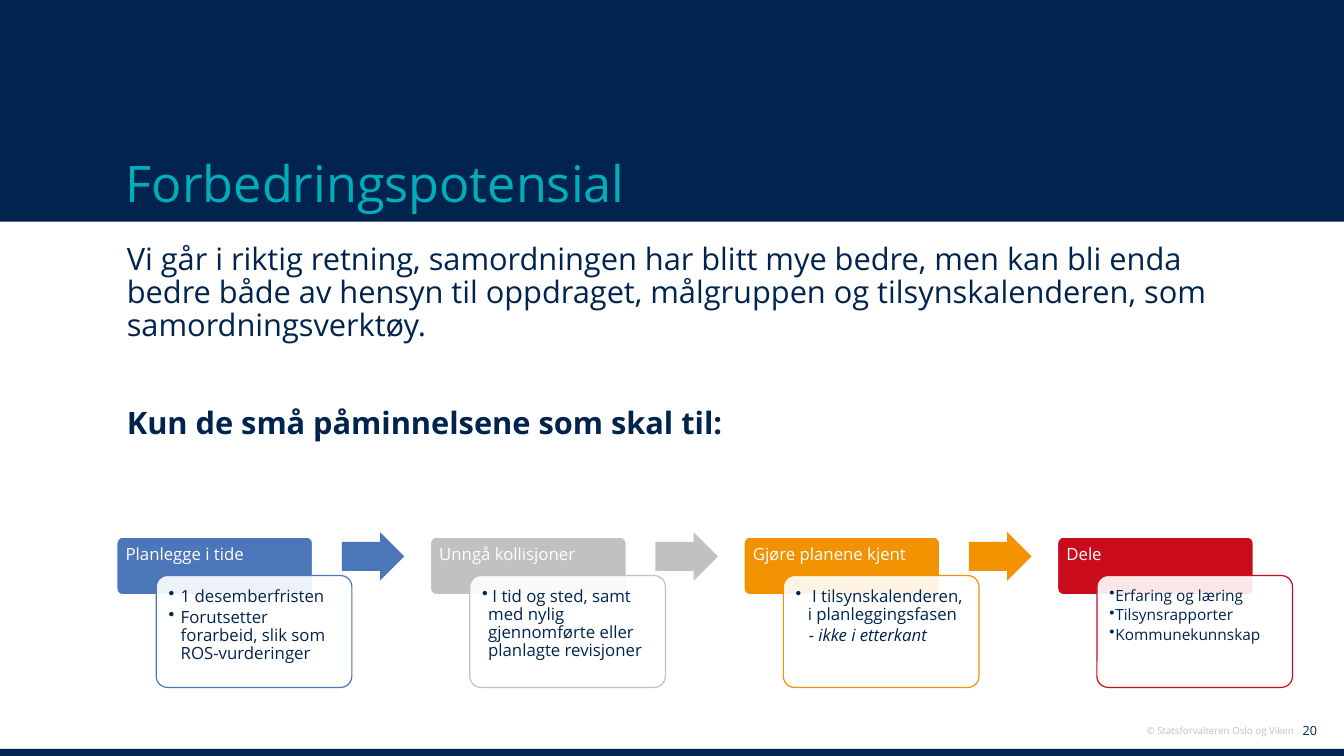
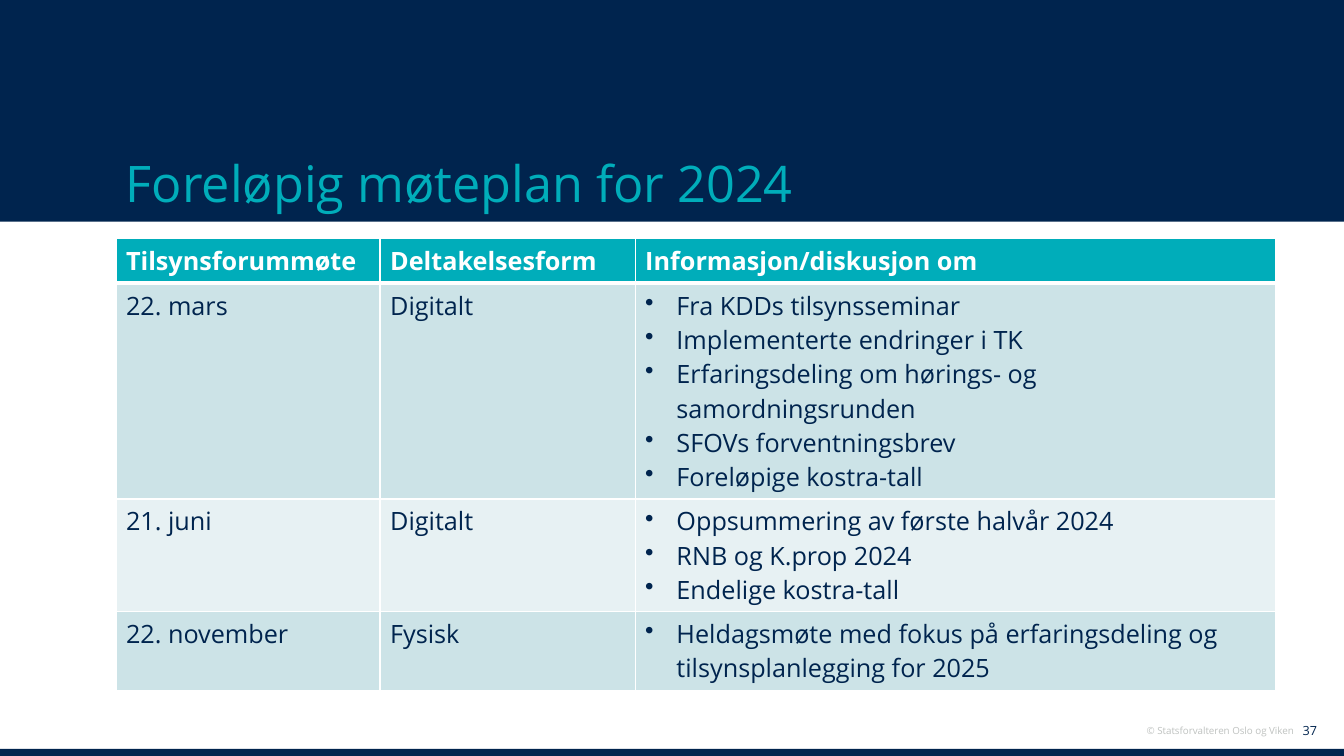
import pptx
import pptx.util
import pptx.dml.color
import pptx.enum.shapes
import pptx.enum.text
import pptx.oxml
import pptx.oxml.ns

Inches = pptx.util.Inches
Pt = pptx.util.Pt
Shape = pptx.enum.shapes.MSO_SHAPE
Align = pptx.enum.text.PP_ALIGN
Anchor = pptx.enum.text.MSO_ANCHOR

FONT = "Open Sans"
COLORS = {
    "navy": "00244E",
    "teal": "00ADBA",
    "white": "FFFFFF",
    "gray": "BFC2C0",
    "blue": "4C76BA",
    "orange": "F39200",
    "red": "C90B1C",
    "row_dark": "CCE3E7",
    "row_light": "E7F1F3",
}


def color(name):
    return pptx.dml.color.RGBColor.from_string(COLORS[name])


def write(frame, text, size=12, ink="navy", bold=False, italic=False, align=None,
          bullet=False, left=0, hanging=0, line_spacing=None, before=None, after=None):
    paragraph = frame.paragraphs[0]
    if paragraph.runs:
        paragraph = frame.add_paragraph()
    properties = paragraph._p.get_or_add_pPr()
    if left:
        properties.set("marL", str(Inches(left)))
        properties.set("indent", str(-Inches(hanging)))
    if bullet:
        mark = pptx.oxml.parse_xml(f'<a:buChar {pptx.oxml.ns.nsdecls("a")} char="•"/>')
        properties.append(mark)
    if align is not None:
        paragraph.alignment = align
    if line_spacing is not None:
        paragraph.line_spacing = line_spacing
    if before is not None:
        paragraph.space_before = Pt(before)
    if after is not None:
        paragraph.space_after = Pt(after)
    run = paragraph.add_run()
    run.text = text
    run.font.name = FONT
    run.font.size = Pt(size)
    run.font.bold = bold
    run.font.italic = italic
    run.font.color.rgb = color(ink)


class Deck:
    def __init__(self):
        self.presentation = pptx.Presentation()
        self.presentation.slide_width = Inches(13.33)
        self.presentation.slide_height = Inches(7.5)
        self.slide = None

    def add_slide(self, title, number):
        self.slide = self.presentation.slides.add_slide(self.presentation.slide_layouts[6])
        self.shape(Shape.RECTANGLE, 0, 7.43, 13.33, 0.08, "navy")
        self.shape(Shape.RECTANGLE, 0, -0.11, 13.33, 2.31, "navy")
        frame = self.text_box(12.62, 7.12, 0.54, 0.26, Anchor.MIDDLE)
        write(frame, number, size=9, align=Align.RIGHT)
        frame = self.text_box(10.85, 7.14, 2.08, 0.22)
        write(frame, "© Statsforvalteren Oslo og Viken", size=7, ink="gray", align=Align.RIGHT)
        frame = self.text_box(1.15, 0.95, 11.02, 1.18, Anchor.BOTTOM)
        frame.margin_bottom = Inches(0.01)
        write(frame, title, size=36, ink="teal", line_spacing=0.9)

    def text_box(self, left, top, width, height, anchor=Anchor.TOP):
        box = self.slide.shapes.add_textbox(
            Inches(left), Inches(top), Inches(width), Inches(height))
        box.text_frame.word_wrap = True
        box.text_frame.vertical_anchor = anchor
        return box.text_frame

    def shape(self, kind, left, top, width, height, fill, line=None,
              adjustments=(), opacity=None):
        shape = self.slide.shapes.add_shape(
            kind, Inches(left), Inches(top), Inches(width), Inches(height))
        shape.shadow.inherit = False
        for index, value in enumerate(adjustments):
            shape.adjustments[index] = value
        shape.fill.solid()
        shape.fill.fore_color.rgb = color(fill)
        if opacity is not None:
            rgb = shape._element.spPr.find(".//" + pptx.oxml.ns.qn("a:srgbClr"))
            rgb.append(pptx.oxml.parse_xml(
                f'<a:alpha {pptx.oxml.ns.nsdecls("a")} val="{opacity * 1000}"/>'))
        if line:
            shape.line.color.rgb = color(line)
            shape.line.width = Pt(0.85)
        else:
            shape.line.fill.background()
        return shape

    def rounded_text(self, left, top, height, fill, line, margin, opacity=None):
        shape = self.shape(Shape.ROUNDED_RECTANGLE, left, top, 1.94, height,
                           fill, line, (0.1,), opacity)
        frame = shape.text_frame
        frame.word_wrap = True
        frame.vertical_anchor = Anchor.TOP
        frame.margin_left = frame.margin_right = Inches(margin)
        frame.margin_top = frame.margin_bottom = Inches(margin)
        return frame

    def step(self, left, heading, accent, items, arrow):
        frame = self.rounded_text(left, 5.33, 0.57, accent, "white", 0.07)
        write(frame, heading, ink="white", align=Align.LEFT, line_spacing=0.9)
        frame = self.rounded_text(left + 0.39, 5.71, 1.11, "white", accent, 0.09, 90)
        for text, style in items:
            write(frame, text, align=Align.LEFT, line_spacing=0.9, after=2, **style)
        if arrow:
            self.shape(Shape.RIGHT_ARROW, left + 2.23, 5.28, 0.62, 0.48, accent,
                       adjustments=(0.6, 0.5))

    def cell(self, cell, lines, fill, bottom=1, **style):
        cell.fill.solid()
        cell.fill.fore_color.rgb = color(fill)
        borders = (("lnL", 1), ("lnR", 1), ("lnT", 1), ("lnB", bottom))
        for index, (side, width) in enumerate(borders):
            cell._tc.get_or_add_tcPr().insert(index, pptx.oxml.parse_xml(
                f'<a:{side} {pptx.oxml.ns.nsdecls("a")} w="{Pt(width)}"><a:solidFill>'
                f'<a:srgbClr val="{COLORS["white"]}"/></a:solidFill></a:{side}>'))
        for line in lines:
            write(cell.text_frame, line, size=18, **style)

    def table(self, left, top, widths, heights, header, rows):
        table = self.slide.shapes.add_table(
            len(heights), len(widths), Inches(left), Inches(top),
            Inches(sum(widths)), Inches(sum(heights))).table
        for column, width in zip(table.columns, widths):
            column.width = Inches(width)
        for row, height in zip(table.rows, heights):
            row.height = Inches(height)
        for column, text in enumerate(header):
            self.cell(table.cell(0, column), [text], "teal", 3, ink="white", bold=True)
        for number, (date, form, topics) in enumerate(rows, 1):
            fill = "row_dark" if number % 2 else "row_light"
            top_border_width = 3 if number == 1 else 1
            self.cell(table.cell(number, 0), [date], fill)
            self.cell(table.cell(number, 1), [form], fill)
            self.cell(table.cell(number, 2), topics, fill,
                      bullet=True, left=0.31, hanging=0.31)
            for column in range(len(widths)):
                properties = table.cell(number, column)._tc.tcPr
                border = properties.find(pptx.oxml.ns.qn("a:lnT"))
                border.set("w", str(Pt(top_border_width)))


def improvement_slide(deck):
    deck.add_slide("Forbedringspotensial", "20")
    frame = deck.text_box(1.16, 2.37, 11.02, 2.4)
    write(frame, "Vi går i riktig retning, samordningen har blitt mye bedre, men kan bli enda "
          "bedre både av hensyn til oppdraget, målgruppen og tilsynskalenderen, som "
          "samordningsverktøy.", size=22, line_spacing=0.9)
    write(frame, "Kun de små påminnelsene som skal til:", size=22, bold=True,
          line_spacing=0.9, before=46)
    wide = {"bullet": True, "left": 0.12, "hanging": 0.12}
    tight = {"bullet": True, "left": 0.06, "hanging": 0.06}
    small = {**tight, "size": 11}
    steps = [
        ("Planlegge i tide", "blue", [
            ("1 desemberfristen", wide),
            ("Forutsetter forarbeid, slik som ROS-vurderinger", wide)]),
        ("Unngå kollisjoner", "gray", [
            (" I tid og sted, samt med nylig gjennomførte eller planlagte revisjoner", tight)]),
        ("Gjøre planene kjent", "orange", [
            (" I tilsynskalenderen, i planleggingsfasen", wide),
            ("- ikke i etterkant", {"italic": True, "left": 0.25, "hanging": 0.12})]),
        ("Dele", "red", [
            ("Erfaring og læring", small),
            ("Tilsynsrapporter", small),
            ("Kommunekunnskap", small)]),
    ]
    for index, (heading, accent, items) in enumerate(steps):
        deck.step(1.16 + 3.11 * index, heading, accent, items, index < len(steps) - 1)


def meeting_slide(deck):
    deck.add_slide("Foreløpig møteplan for 2024", "37")
    deck.table(
        1.15, 2.37, (2.62, 2.53, 6.35), (0.44, 2.14, 1.12, 0.78),
        ("Tilsynsforummøte", "Deltakelsesform", "Informasjon/diskusjon om"),
        [
            ("22. mars", "Digitalt", [
                "Fra KDDs tilsynsseminar",
                "Implementerte endringer i TK",
                "Erfaringsdeling om hørings- og samordningsrunden",
                "SFOVs forventningsbrev",
                "Foreløpige kostra-tall"]),
            ("21. juni", "Digitalt", [
                "Oppsummering av første halvår 2024",
                "RNB og K.prop 2024",
                "Endelige kostra-tall"]),
            ("22. november", "Fysisk", [
                "Heldagsmøte med fokus på erfaringsdeling og tilsynsplanlegging for 2025"]),
        ])


def main():
    deck = Deck()
    improvement_slide(deck)
    meeting_slide(deck)
    deck.presentation.save("out.pptx")


if __name__ == "__main__":
    main()
